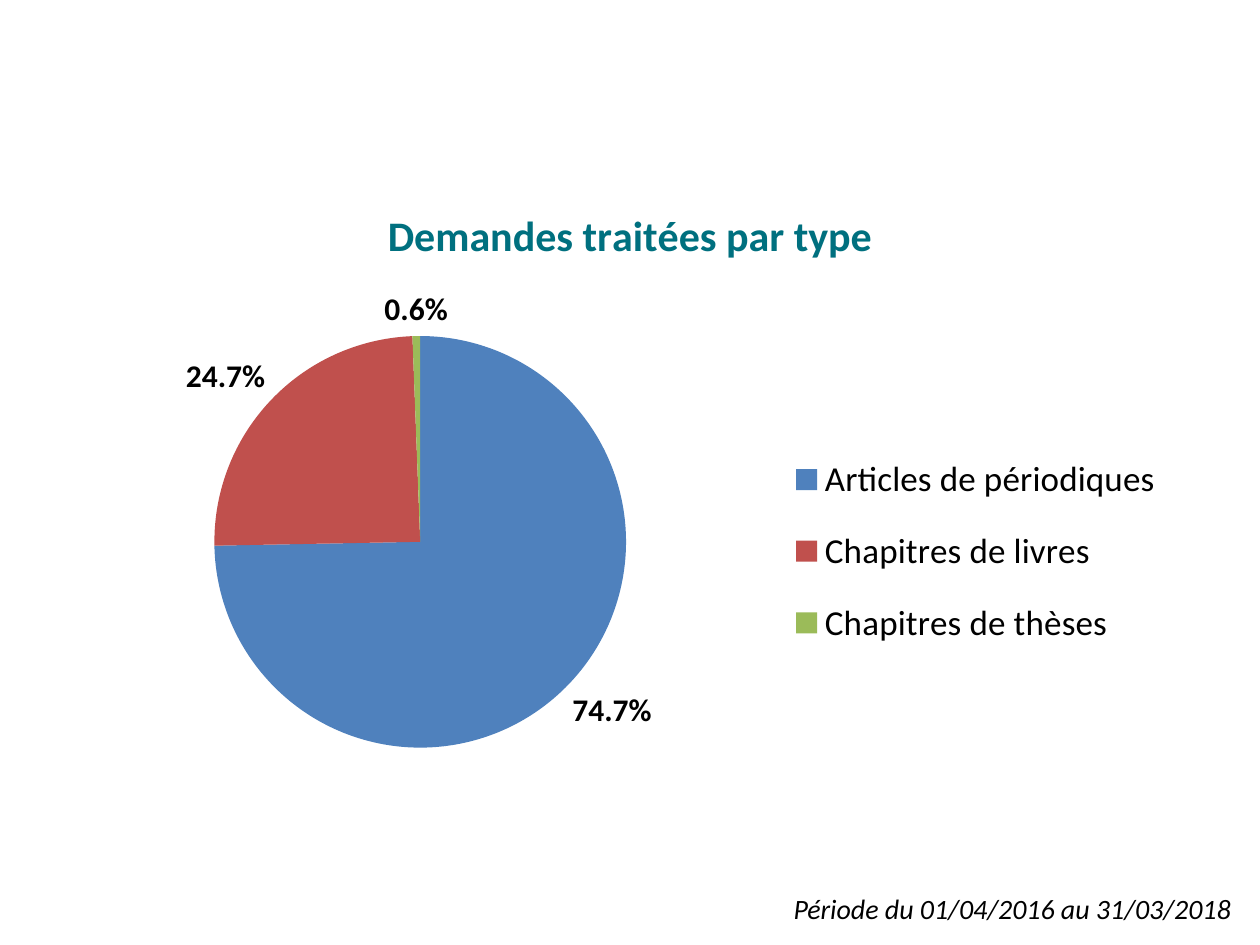
"""Build a slide with a pie chart of handled requests by type."""
import lxml.etree
import pptx
import pptx.chart.data
import pptx.dml.color
import pptx.enum.chart
import pptx.enum.text
import pptx.oxml
import pptx.oxml.ns
import pptx.util

COLORS = {
    "title": "00707F",
    "text": "000000",
    "Articles de périodiques": "4F81BD",
    "Chapitres de livres": "C0504D",
    "Chapitres de thèses": "9BBB59",
}
TITLE = "Demandes traitées par type"
REQUESTS = {
    "Articles de périodiques": 74.7,
    "Chapitres de livres": 24.7,
    "Chapitres de thèses": 0.6,
}
PERIOD = "Période du 01/04/2016 au 31/03/2018"
CHART_BOX = (0.5, 1.43, 9, 4.95)
PERIOD_BOX = (5.7, 7.03, 4.17, 0.37)
PLOT_LAYOUT = {"x": 0.13, "y": 0.25, "w": 0.37, "h": 0.66}
LEGEND_LAYOUT = {"x": 0.63, "y": 0.4, "w": 0.35, "h": 0.39}


def inches(box):
    return [pptx.util.Inches(length) for length in box]


def rgb(name):
    return pptx.dml.color.RGBColor.from_string(COLORS[name])


def set_font(font, size, color="text", **styles):
    values = {"name": "Calibri", "size": pptx.util.Pt(size), **styles}
    for attribute, value in values.items():
        setattr(font, attribute, value)
    font.color.rgb = rgb(color)


def set_layout(element, position, predecessor=None, inner=False):
    for old_layout in element.findall(pptx.oxml.ns.qn("c:layout")):
        element.remove(old_layout)
    layout = pptx.oxml.parse_xml(f"<c:layout {pptx.oxml.ns.nsdecls('c')}><c:manualLayout/></c:layout>")
    values = {"layoutTarget": "inner"} if inner else {}
    values.update({"xMode": "edge", "yMode": "edge"}, **position)
    for tag, value in values.items():
        lxml.etree.SubElement(layout[0], pptx.oxml.ns.qn(f"c:{tag}"), val=str(value))
    if predecessor is None:
        element.insert(0, layout)
    else:
        predecessor.addnext(layout)


def add_requests_chart(slide):
    data = pptx.chart.data.CategoryChartData()
    data.categories = list(REQUESTS)
    data.add_series(TITLE, list(REQUESTS.values()))
    chart = slide.shapes.add_chart(pptx.enum.chart.XL_CHART_TYPE.PIE, *inches(CHART_BOX), data).chart
    set_font(chart.font, 18)

    chart.has_title = True
    chart.chart_title.text_frame.text = TITLE
    title_run = chart.chart_title.text_frame.paragraphs[0].runs[0]
    set_font(title_run.font, 24, "title", bold=True)

    chart.has_legend = True
    legend = chart.legend
    legend.position = pptx.enum.chart.XL_LEGEND_POSITION.RIGHT
    legend.include_in_layout = False
    set_font(legend.font, 20)

    plot = chart.plots[0]
    plot.vary_by_categories = True
    series = plot.series[0]
    for index, category in enumerate(REQUESTS):
        fill = series.points[index].format.fill
        fill.solid()
        fill.fore_color.rgb = rgb(category)

    labels = series.data_labels
    label_format = {
        "show_percentage": True,
        "show_value": False,
        "number_format": "0.0%",
        "number_format_is_linked": False,
        "position": pptx.enum.chart.XL_LABEL_POSITION.OUTSIDE_END,
    }
    for attribute, value in label_format.items():
        setattr(labels, attribute, value)
    set_font(labels.font, 18, bold=True)

    chart_element = chart.element
    plot_area = chart_element.find(".//" + pptx.oxml.ns.qn("c:plotArea"))
    legend_element = chart_element.find(".//" + pptx.oxml.ns.qn("c:legend"))
    legend_position = legend_element.find(pptx.oxml.ns.qn("c:legendPos"))
    set_layout(plot_area, PLOT_LAYOUT, inner=True)
    set_layout(legend_element, LEGEND_LAYOUT, legend_position)


def add_period(slide):
    text_frame = slide.shapes.add_textbox(*inches(PERIOD_BOX)).text_frame
    text_frame.word_wrap = True
    text_frame.auto_size = pptx.enum.text.MSO_AUTO_SIZE.SHAPE_TO_FIT_TEXT
    paragraph = text_frame.paragraphs[0]
    paragraph.text = PERIOD
    paragraph.alignment = pptx.enum.text.PP_ALIGN.RIGHT
    set_font(paragraph.runs[0].font, 16, italic=True)


def main():
    presentation = pptx.Presentation()
    presentation.slide_width = pptx.util.Inches(10)
    presentation.slide_height = pptx.util.Inches(7.5)
    slide = presentation.slides.add_slide(presentation.slide_layouts[6])
    add_requests_chart(slide)
    add_period(slide)
    presentation.save("out.pptx")


if __name__ == "__main__":
    main()
